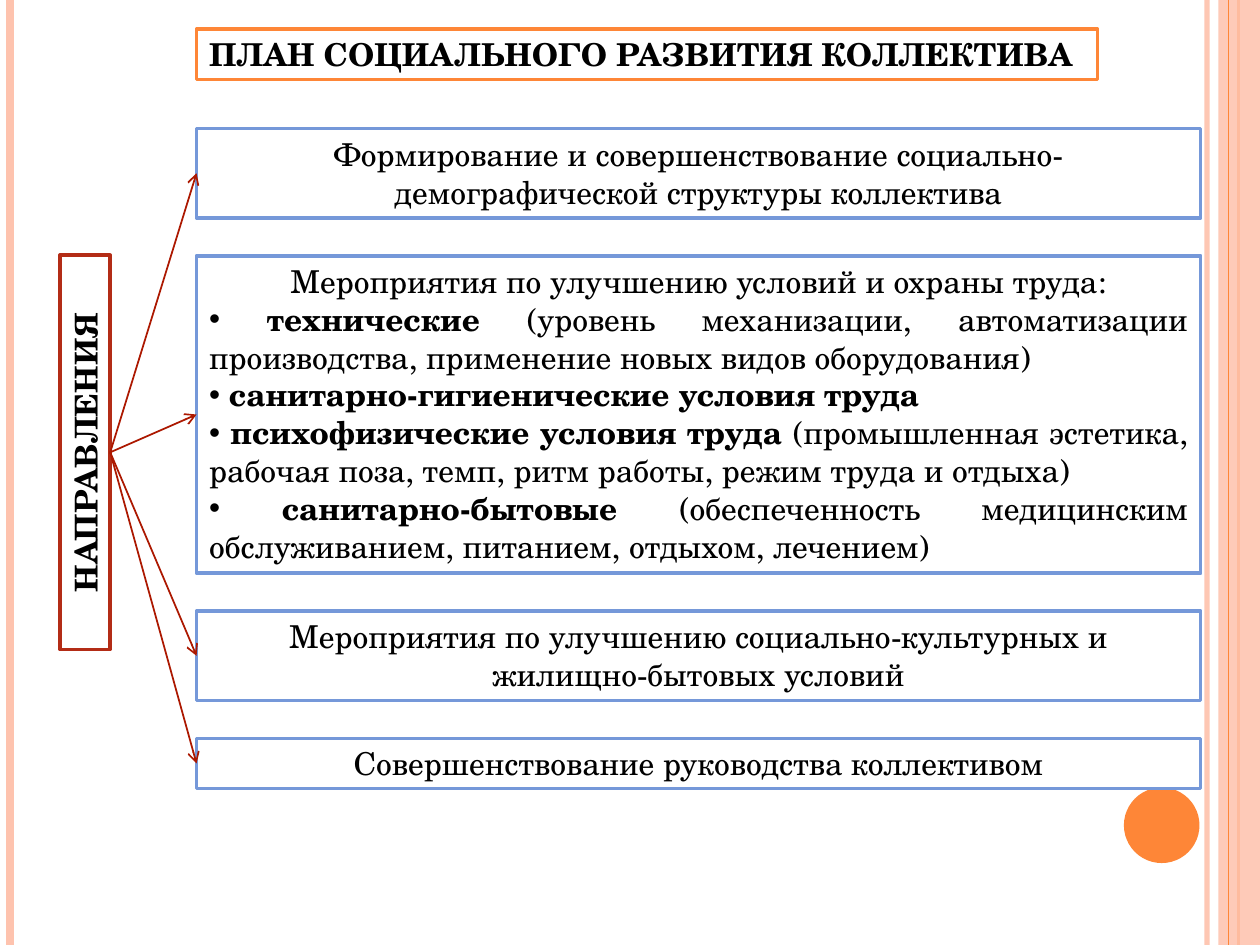
from lxml import etree
from pptx import Presentation
from pptx.dml.color import RGBColor
from pptx.enum.shapes import MSO_CONNECTOR, MSO_SHAPE
from pptx.enum.text import MSO_ANCHOR, MSO_AUTO_SIZE, PP_ALIGN
from pptx.oxml.ns import qn
from pptx.util import Inches, Pt

STRAIGHT = MSO_CONNECTOR.STRAIGHT
RECTANGLE, OVAL = MSO_SHAPE.RECTANGLE, MSO_SHAPE.OVAL
LEFT, CENTER, JUSTIFY = PP_ALIGN.LEFT, PP_ALIGN.CENTER, PP_ALIGN.JUSTIFY
TOP, FIXED_SIZE = MSO_ANCHOR.TOP, MSO_AUTO_SIZE.NONE

WHITE = RGBColor(0xFF, 0xFF, 0xFF)
BLACK = RGBColor(0x00, 0x00, 0x00)
ORANGE = RGBColor(0xFE, 0x86, 0x37)
PEACH = RGBColor(0xFE, 0xC3, 0xAE)
BLUE = RGBColor(0x75, 0x98, 0xD9)
RED = RGBColor(0xB3, 0x2C, 0x16)
ARROW_RED = RGBColor(0xAC, 0x18, 0x00)

FONT = "TeX Gyre Schola"
WIDTH, HEIGHT = 10, 7.5
COLUMN_LEFT, COLUMN_WIDTH = 1.56, 7.97
FIRST_TOP, GAP = 1.02, 0.3
ONE_LINE, TWO_LINES, EIGHT_LINES = 0.4, 0.71, 2.52
LEFT_SIDE, BOTTOM_SIDE = 1, 2

MEASURES = "Мероприятия по улучшению условий и охраны труда:"
CONDITIONS = [
    ("технические ", "(уровень механизации, автоматизации производства, "
     "применение новых видов оборудования)"),
    ("санитарно-гигиенические условия труда", ""),
    ("психофизические условия труда ", "(промышленная эстетика, рабочая поза, "
     "темп, ритм работы, режим труда и отдыха)"),
    ("санитарно-бытовые ", "(обеспеченность медицинским обслуживанием, "
     "питанием, отдыхом, лечением)"),
]
DIRECTIONS = [
    ("Формирование и совершенствование социально-демографической "
     "структуры коллектива", TWO_LINES),
    (MEASURES, EIGHT_LINES),
    ("Мероприятия по улучшению социально-культурных и "
     "жилищно-бытовых условий", TWO_LINES),
    ("Совершенствование руководства коллективом", ONE_LINE),
]


def set_alpha(fill_owner, percent):
    color = fill_owner.find(".//" + qn("a:srgbClr"))
    etree.SubElement(color, qn("a:alpha"), val=str(percent * 1000))


def add_line(slide, start, end, color, width):
    line = slide.shapes.add_connector(STRAIGHT, *map(Inches, start + end))
    line.line.color.rgb = color
    line.line.width = Pt(width)
    etree.SubElement(line._element.spPr, qn("a:effectLst"))
    return line


def add_plain_shape(slide, kind, box, color):
    shape = slide.shapes.add_shape(kind, *map(Inches, box))
    shape.shadow.inherit = False
    shape.fill.solid()
    shape.fill.fore_color.rgb = color
    shape.line.fill.background()
    return shape


def add_side_stripes(slide):
    for share, color, width, alpha in [(0.958, PEACH, 3, 93), (0.008, PEACH, 4.5, 100),
                                       (0.983, ORANGE, 1.5, 100)]:
        x = share * WIDTH
        stripe = add_line(slide, (x, 0), (x, HEIGHT), color, width)
        set_alpha(stripe._element.spPr, alpha)
    band = add_plain_shape(slide, RECTANGLE, (9.67, 0, 0.33, HEIGHT), PEACH)
    set_alpha(band._element.spPr, 87)
    add_line(slide, (9.75, 0), (9.75, HEIGHT), ORANGE, 0.75)
    add_plain_shape(slide, OVAL, (8.92, 6.25, 0.6, 0.6), ORANGE)


def frame(shape, box, color):
    """Place a shape as a white box with a coloured outline and no text."""
    for side, length in zip(("left", "top", "width", "height"), box):
        setattr(shape, side, Inches(length))
    shape.fill.solid()
    shape.fill.fore_color.rgb = WHITE
    shape.line.color.rgb = color
    shape.line.width = Pt(2)
    settings = {"word_wrap": True, "auto_size": FIXED_SIZE, "vertical_anchor": TOP}
    for name, value in settings.items():
        setattr(shape.text_frame, name, value)


def write(paragraph, runs, alignment):
    settings = {"alignment": alignment, "space_before": Pt(0), "line_spacing": 1.0}
    for name, value in settings.items():
        setattr(paragraph, name, value)
    for text, bold in runs:
        run = paragraph.add_run()
        run.text = text
        for name, value in {"name": FONT, "size": Pt(18), "bold": bold}.items():
            setattr(run.font, name, value)
        run.font.color.rgb = BLACK


def set_bullet(paragraph, char=None):
    properties = paragraph._p.get_or_add_pPr()
    properties.set("marL", "0")
    properties.set("indent", "0")
    if char:
        etree.SubElement(properties, qn("a:buFont"), typeface="Arial")
        etree.SubElement(properties, qn("a:buChar"), char=char)
    else:
        etree.SubElement(properties, qn("a:buNone"))


def add_title(slide):
    title = slide.shapes.title
    frame(title, (COLUMN_LEFT, 0.23, 7.15, ONE_LINE), ORANGE)
    write(title.text_frame.paragraphs[0],
          [("ПЛАН СОЦИАЛЬНОГО РАЗВИТИЯ КОЛЛЕКТИВА", True)], LEFT)


def add_heading(slide, box):
    """Add the box of the directions, turned to read upwards."""
    heading = add_plain_shape(slide, RECTANGLE, box, WHITE)
    frame(heading, box, RED)
    heading.rotation = 270
    write(heading.text_frame.paragraphs[0], [("НАПРАВЛЕНИЯ", True)], CENTER)
    return heading


def add_conditions(text_frame):
    for term, details in CONDITIONS:
        paragraph = text_frame.add_paragraph()
        runs = [(" ", False), (term, True)]
        if details:
            runs.append((details, False))
        write(paragraph, runs, JUSTIFY)
        set_bullet(paragraph, "•")


def add_directions(slide):
    """Stack the direction boxes with equal gaps."""
    directions, top = [], FIRST_TOP
    for text, height in DIRECTIONS:
        box = (COLUMN_LEFT, top, COLUMN_WIDTH, height)
        if text == MEASURES:
            direction = slide.placeholders[1]
        else:
            direction = add_plain_shape(slide, RECTANGLE, box, WHITE)
        frame(direction, box, BLUE)
        first = direction.text_frame.paragraphs[0]
        write(first, [(text, False)], CENTER)
        set_bullet(first)
        if text == MEASURES:
            add_conditions(direction.text_frame)
        directions.append(direction)
        top += height + GAP
    return directions


def add_arrows(slide, heading, directions):
    start_x = heading.left + (heading.width + heading.height) // 2
    start_y = heading.top + heading.height // 2
    for direction in directions:
        arrow = add_line(slide, (0, 0), (1, 1), ARROW_RED, 1)
        arrow.begin_connect(heading, BOTTOM_SIDE)
        # The bottom of the turned heading faces right.
        arrow.begin_x, arrow.begin_y = start_x, start_y
        arrow.end_connect(direction, LEFT_SIDE)
        etree.SubElement(arrow.line._get_or_add_ln(), qn("a:tailEnd"), type="arrow")


def main():
    presentation = Presentation()
    presentation.slide_width = Inches(WIDTH)
    presentation.slide_height = Inches(HEIGHT)
    slide = presentation.slides.add_slide(presentation.slide_layouts[1])
    add_side_stripes(slide)
    add_title(slide)
    heading = add_heading(slide, (-0.89, 3.39, 3.13, ONE_LINE))
    add_arrows(slide, heading, add_directions(slide))
    presentation.save("out.pptx")


if __name__ == "__main__":
    main()
